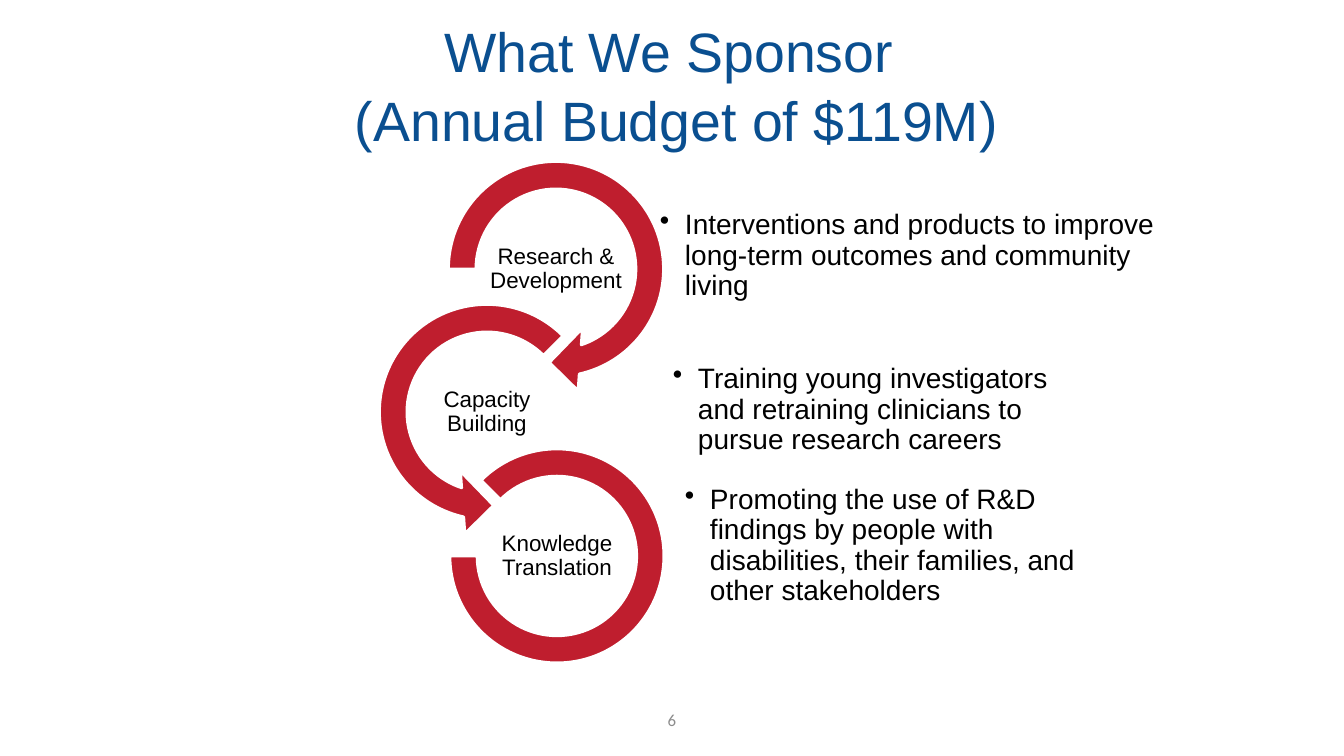
import pptx
import pptx.dml.color
import pptx.enum.shapes
import pptx.enum.text
import pptx.util
import lxml.etree

SHAPE = pptx.enum.shapes.MSO_SHAPE
ALIGN = pptx.enum.text.PP_ALIGN
PX = 914400 / 100.8
THEME = {
    "blue": "0A4F90", "red": "BF1E2E", "white": "FFFFFF", "black": "000000", "grey": "8C8C8C",
    "title": 39.6, "detail": 20, "label": 16, "number": 12,
    "body font": "Arial", "number font": "Calibri",
}


def px(length):
    return pptx.util.Emu(round(length * PX))


def add_text(box, text, size, color, align, font="body font", inset=None, spacing=None):
    textbox = slide.shapes.add_textbox(*map(px, box))
    frame = textbox.text_frame
    frame.word_wrap = True
    frame.vertical_anchor = pptx.enum.text.MSO_ANCHOR.MIDDLE
    if inset is not None:
        frame.margin_left = frame.margin_right = px(inset)
        frame.margin_top = frame.margin_bottom = px(inset)
    frame.text = text
    paragraph = frame.paragraphs[0]
    paragraph.alignment = align
    if spacing:
        paragraph.line_spacing = spacing
    for run in paragraph.runs:
        run.font.name = THEME[font]
        run.font.size = pptx.util.Pt(THEME[size])
        run.font.color.rgb = pptx.dml.color.RGBColor.from_string(THEME[color])
    return paragraph


deck = pptx.Presentation()
deck.slide_width, deck.slide_height = px(1344), px(756)
slide = deck.slides.add_slide(deck.slide_layouts[6])

# Title
add_text((227, 20, 899, 127), "What We Sponsor \v(Annual Budget of $119M)",
         "title", "blue", ALIGN.CENTER, spacing=1.04)

# Chain of three rings, each with a label inside and a bullet beside it
LABEL_WIDTH, LABEL_HEIGHT, DETAIL_HEIGHT = 139, 70, 100
activities = [
    # ring, diameter, adjustments, centre x, centre y, label, detail box, detail
    (SHAPE.CIRCULAR_ARROW, 250, (0.11, 11.42, 45, 108, 0.125), 556, 269,
     "Research & Development", (659, 206, 500),
     "Interventions and products to improve long-term outcomes and community living"),
    (SHAPE.LEFT_CIRCULAR_ARROW, 250, (0.11, 11.42, 63, 189, 0.125), 487, 412,
     "Capacity Building", (672, 360, 425),
     "Training young investigators and retraining clinicians to pursue research careers"),
    (SHAPE.BLOCK_ARC, 214, (135, 108, 0.127), 557, 556,
     "Knowledge Translation", (684, 496, 435),
     "Promoting the use of R&D findings by people with disabilities, "
     "their families, and other stakeholders"),
]
for kind, diameter, adjustments, x, y, label, (left, top, width), detail in activities:
    ring = slide.shapes.add_shape(
        kind, px(x - diameter / 2), px(y - diameter / 2), px(diameter), px(diameter))
    for index, value in enumerate(adjustments):
        ring.adjustments[index] = value
    ring.shadow.inherit = False
    ring.fill.solid()
    ring.fill.fore_color.rgb = pptx.dml.color.RGBColor.from_string(THEME["red"])
    ring.line.color.rgb = pptx.dml.color.RGBColor.from_string(THEME["white"])
    ring.line.width = pptx.util.Pt(2)

    add_text((x - LABEL_WIDTH / 2, y - LABEL_HEIGHT / 2, LABEL_WIDTH, LABEL_HEIGHT),
             label, "label", "black", ALIGN.CENTER, inset=1, spacing=0.9)

    bullet = add_text((left, top, width, DETAIL_HEIGHT),
                      detail, "detail", "black", ALIGN.LEFT, inset=1, spacing=0.9)
    properties = bullet._p.get_or_add_pPr()
    properties.set("marL", str(px(25)))
    properties.set("indent", str(px(-25)))
    mark = lxml.etree.SubElement(properties, pptx.oxml.ns.qn("a:buChar"))
    mark.set("char", "•")

# Slide number
add_text((641, 700, 45, 40), "6", "number", "grey", ALIGN.RIGHT, font="number font")

deck.save("out.pptx")
